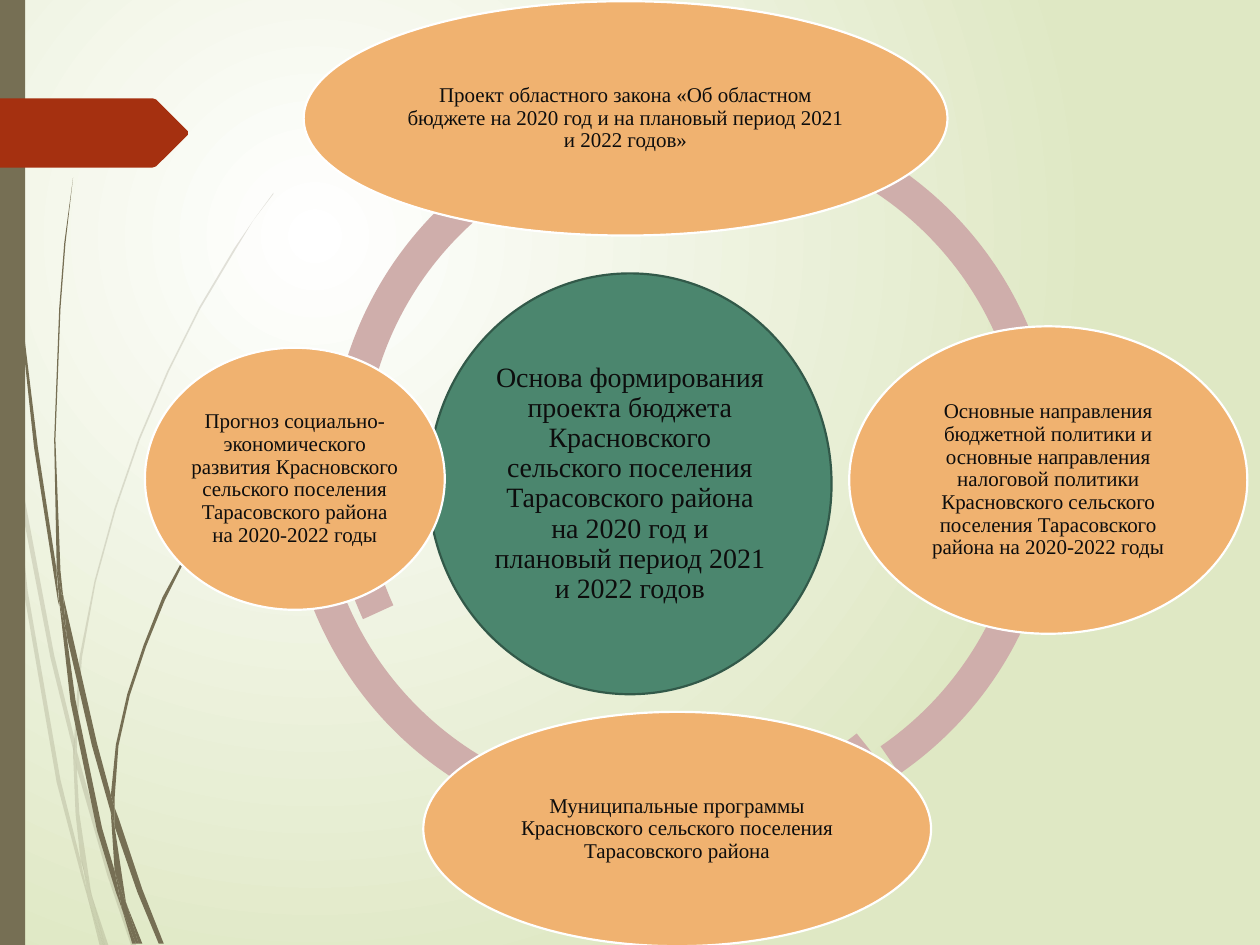
"""Build a slide showing the four foundations of a settlement budget around a ring."""
from lxml.etree import SubElement
from pptx import Presentation
from pptx.dml.color import RGBColor
from pptx.enum.shapes import MSO_SHAPE
from pptx.enum.text import MSO_ANCHOR, PP_ALIGN
from pptx.oxml.ns import qn
from pptx.util import Inches, Pt

WHITE = RGBColor(0xFF, 0xFF, 0xFF)
PALE_GREEN = RGBColor(0xDF, 0xE8, 0xC4)
OLIVE = RGBColor(0x76, 0x6F, 0x54)
RUST = RGBColor(0xA5, 0x30, 0x10)
ROSE = RGBColor(0xCF, 0xAE, 0xAB)
GREEN = RGBColor(0x4B, 0x86, 0x6E)
DARK_GREEN = RGBColor(0x32, 0x59, 0x49)
ORANGE = RGBColor(0xF0, 0xB2, 0x70)
INK = RGBColor(0x0D, 0x0D, 0x0D)

FONT = "Times New Roman"
RING_SIZE = 5.77
RING_THICKNESS = 0.046

FADED_STEMS = [
    [(0.08, 3.5), (0.06, 3.22), (0, 2.82), (0, 2.99), (0.07, 3.44)],
    [(0.4, 5.22), (0.59, 5.99), (0.59, 5.86), (0.43, 5.2), (0.1, 3.45), (0.12, 3.76)],
    [(0.64, 6.07), (0.61, 5.96), (0.61, 6.1), (0.85, 6.94), (1.04, 7.5), (1.08, 7.5),
     (0.88, 6.92)],
    [(0.83, 7.5), (0.86, 7.5), (0.73, 7.11)],
    [(0.64, 6.83), (0.48, 6.19), (0.22, 4.69), (0.12, 3.76), (0.08, 3.5), (0.19, 4.7),
     (0.45, 6.21), (0.64, 6.93), (0.7, 7.14), (0.69, 7.07)],
    [(0.58, 5.99), (0.6, 6.46), (0.64, 6.83), (0.67, 6.92), (0.73, 7.11), (0.72, 7.06),
     (0.63, 6.46), (0.61, 6.1), (0.61, 6.08)],
    [(0.61, 5.84), (0.65, 5.22), (0.76, 4.62), (0.92, 4.04), (1.11, 3.49), (1.34, 2.95),
     (1.59, 2.45), (1.87, 1.98), (2.01, 1.75), (2.17, 1.54), (2.17, 1.53), (2.01, 1.75),
     (1.86, 1.97), (1.58, 2.44), (1.33, 2.94), (1.1, 3.48), (0.91, 4.03), (0.75, 4.61),
     (0.63, 5.22), (0.59, 5.84), (0.59, 5.86), (0.61, 5.96)],
    [(0.7, 7.14), (0.79, 7.5), (0.82, 7.5)],
    [(0.61, 6.08), (0.61, 6.1), (0.61, 5.96), (0.59, 5.86), (0.58, 5.99)],
    [(0.67, 6.92), (0.65, 6.83), (0.69, 7.07), (0.7, 7.14), (0.82, 7.5), (0.83, 7.5),
     (0.73, 7.11)],
]
SOLID_STEMS = [
    [(0.05, 1.1), (0.14, 2.33), (0.27, 3.55), (0.46, 4.77), (0.47, 4.81), (0.45, 4.57),
     (0.45, 4.53), (0.3, 3.55), (0.15, 2.32), (0.06, 1.09), (0.04, 0.48), (0.03, 0),
     (0.02, 0), (0.03, 0.48)],
    [(0.73, 5.92), (0.88, 6.45), (0.88, 6.33), (0.88, 6.31), (0.77, 5.9), (0.5, 4.72),
     (0.53, 5.05)],
    [(0.94, 6.49), (0.91, 6.41), (0.91, 6.56), (1.09, 7.08), (1.26, 7.49), (1.3, 7.49),
     (1.13, 7.06)],
    [(0.91, 6.91), (0.81, 6.57), (0.6, 5.56), (0.53, 5.05), (0.47, 4.77), (0.56, 5.57),
     (0.77, 6.59), (0.92, 7.08), (0.97, 7.22), (0.96, 7.17)],
    [(0.5, 4.72), (0.48, 4.53), (0.44, 3.49), (0.48, 2.45), (0.52, 1.93), (0.58, 1.41),
     (0.51, 1.93), (0.47, 2.45), (0.43, 3.49), (0.45, 4.49), (0.49, 4.72)],
    [(1.1, 7.49), (1.13, 7.49), (1.01, 7.19)],
    [(0.47, 4.77), (0.53, 5.05), (0.5, 4.72), (0.49, 4.72), (0.45, 4.49), (0.45, 4.53)],
    [(0.91, 6.33), (0.94, 5.92), (1.03, 5.52), (1.16, 5.13), (1.31, 4.76), (1.49, 4.4),
     (1.69, 4.06), (1.91, 3.74), (2.03, 3.59), (2.16, 3.44), (2.15, 3.44), (2.03, 3.58),
     (1.91, 3.73), (1.68, 4.05), (1.48, 4.39), (1.29, 4.74), (1.14, 5.12), (1.01, 5.51),
     (0.92, 5.91), (0.88, 6.31), (0.91, 6.41)],
    [(0.97, 7.22), (1.05, 7.49), (1.08, 7.49)],
    [(0.88, 6.45), (0.91, 6.91), (0.96, 7.06), (1.01, 7.19), (1, 7.16), (0.91, 6.56),
     (0.9, 6.51)],
    [(0.88, 6.45), (0.9, 6.51), (0.91, 6.56), (0.91, 6.41), (0.88, 6.31), (0.88, 6.33)],
    [(0.96, 7.06), (0.91, 6.91), (0.96, 7.17), (0.97, 7.22), (1.08, 7.49), (1.1, 7.49),
     (1.01, 7.19)],
]
ARROW = [(0, 0.78), (1.21, 0.78), (1.24, 0.79), (1.49, 1.04), (1.49, 1.07), (1.24, 1.32),
         (1.21, 1.33), (0, 1.33)]

RING_ARCS = [
    (2.28, 0.87, 107.54, 159.59),
    (2.28, 0.89, 51.38, 107.73),
    (2.62, 0.88, 0.53, 55.49),
    (2.62, 0.83, 155.43, 1.19),
]
CENTRE = ((3.4, 2.17, 3.2, 3.34),
          "Основа формирования проекта бюджета Красновского сельского поселения "
          "Тарасовского района на 2020 год и плановый период 2021 и 2022 годов")
FOUNDATIONS = [
    ((2.41, 0.01, 5.11, 1.86),
     "Проект областного закона «Об областном бюджете на 2020 год и на плановый "
     "период 2021 и 2022 годов»"),
    ((6.74, 2.59, 3.16, 2.44),
     "Основные направления бюджетной политики и основные направления налоговой политики "
     "Красновского сельского поселения Тарасовского района на 2020-2022 годы"),
    ((3.36, 5.65, 4.03, 1.86),
     "Муниципальные программы Красновского сельского поселения Тарасовского района"),
    ((1.15, 2.76, 2.38, 2.08),
     "Прогноз социально-экономического развития Красновского сельского поселения "
     "Тарасовского района на 2020-2022 годы"),
]


def paint(shape, fill, line=None, opacity=100):
    shape.shadow.inherit = False
    shape.fill.solid()
    shape.fill.fore_color.rgb = fill
    if opacity < 100:
        color = shape.element.spPr.find(qn("a:solidFill"))[0]
        SubElement(color, qn("a:alpha"), val=str(opacity * 1000))
    if line is None:
        shape.line.fill.background()
    else:
        shape.line.color.rgb = line
        shape.line.width = Pt(1.25)


def add_preset(page, kind, place, fill, line=None):
    shape = page.shapes.add_shape(kind, *map(Inches, place))
    paint(shape, fill, line)
    return shape


def add_outline(page, points, fill, opacity=100):
    start, *rest = [(Inches(x), Inches(y)) for x, y in points]
    builder = page.shapes.build_freeform(*start)
    builder.add_line_segments(rest, close=True)
    paint(builder.convert_to_shape(), fill, opacity=opacity)


def write(shape, text, size=12, color=INK):
    box = shape.text_frame
    box.word_wrap = True
    box.vertical_anchor = MSO_ANCHOR.MIDDLE
    box.margin_left = box.margin_right = box.margin_top = box.margin_bottom = Inches(0.02)
    para = box.paragraphs[0]
    para.alignment = PP_ALIGN.CENTER
    para.line_spacing = 0.9
    span = para.add_run()
    span.text = text
    span.font.name = FONT
    span.font.size = Pt(size)
    span.font.color.rgb = color


def set_background(page):
    fill = page.background.fill
    fill.gradient()
    for stop, color in zip(fill.gradient_stops, (WHITE, PALE_GREEN)):
        stop.color.rgb = color
    gradient = next(page.element.iter(qn("a:gradFill")))
    gradient.remove(gradient.find(qn("a:lin")))
    circle = SubElement(gradient, qn("a:path"), path="circle")
    SubElement(circle, qn("a:fillToRect"), l="50000", t="50000", r="100000", b="100000")


def main():
    deck = Presentation()
    deck.slide_width, deck.slide_height = Inches(10), Inches(7.5)
    page = deck.slides.add_slide(deck.slide_layouts[6])
    set_background(page)
    for stems, opacity in ((FADED_STEMS, 20), (SOLID_STEMS, 100)):
        for points in stems:
            add_outline(page, points, OLIVE, opacity)
    add_preset(page, MSO_SHAPE.RECTANGLE, (0, 0, 0.2, 7.5), OLIVE)
    add_outline(page, ARROW, RUST)
    for left, top, start, end in RING_ARCS:
        arc = add_preset(page, MSO_SHAPE.BLOCK_ARC, (left, top, RING_SIZE, RING_SIZE), ROSE)
        for index, value in enumerate((start * 0.6, end * 0.6, RING_THICKNESS)):
            arc.adjustments[index] = value
    place, text = CENTRE
    write(add_preset(page, MSO_SHAPE.OVAL, place, GREEN, DARK_GREEN), text, size=16)
    for place, text in FOUNDATIONS:
        write(add_preset(page, MSO_SHAPE.OVAL, place, ORANGE, WHITE), text)
    deck.save("out.pptx")


if __name__ == "__main__":
    main()
